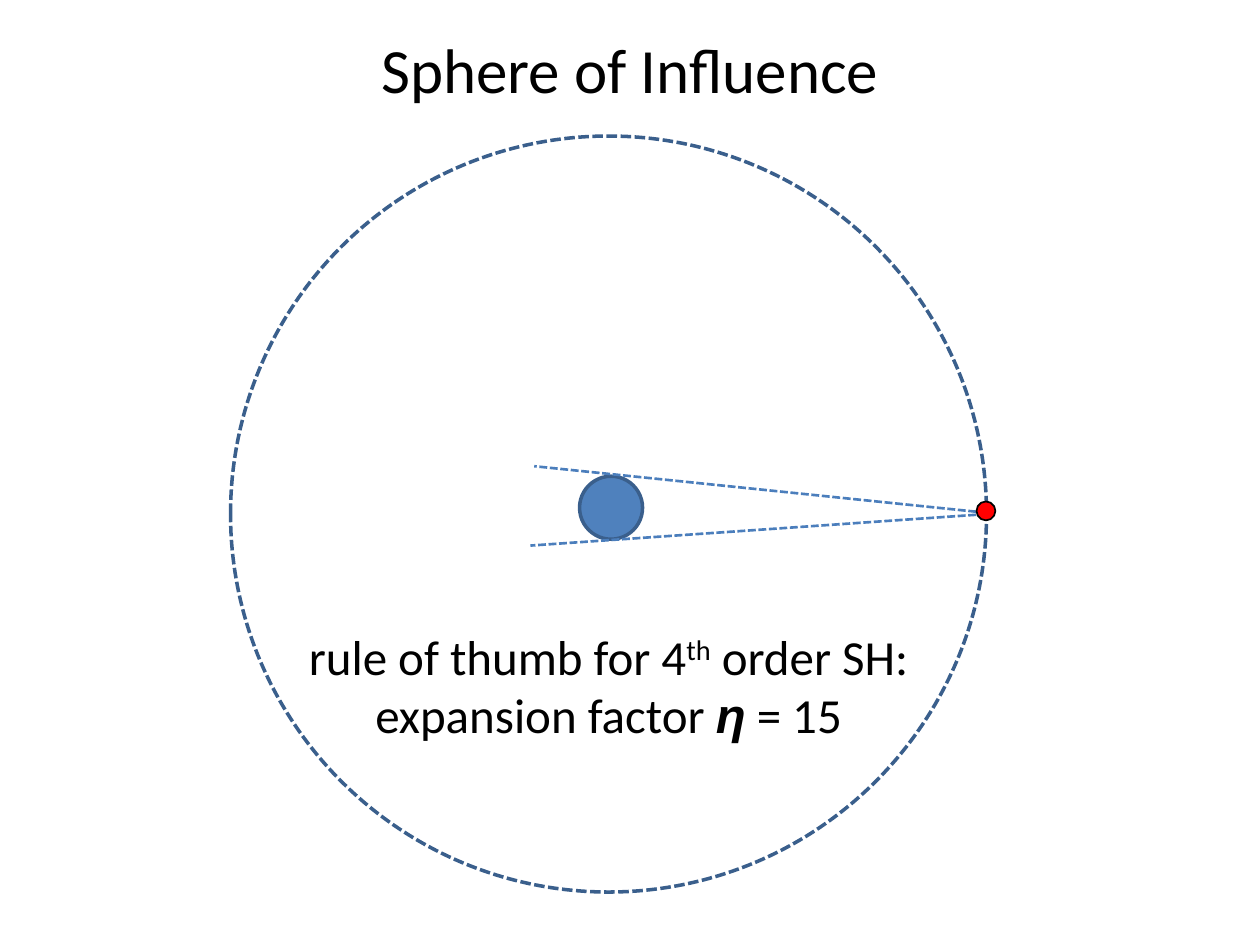
from lxml import etree
from pptx import Presentation
from pptx.dml.color import RGBColor
from pptx.enum.dml import MSO_LINE_DASH_STYLE as Dash
from pptx.enum.shapes import MSO_CONNECTOR, MSO_SHAPE
from pptx.enum.text import MSO_ANCHOR, MSO_AUTO_SIZE, PP_ALIGN
from pptx.oxml.ns import qn
from pptx.util import Inches, Pt

BLACK = RGBColor(0x00, 0x00, 0x00)
RED = RGBColor(0xFF, 0x00, 0x00)
BLUE = RGBColor(0x4F, 0x81, 0xBD)
DARK_BLUE = RGBColor(0x3A, 0x5F, 0x8C)
TANGENT_BLUE = RGBColor(0x4B, 0x7E, 0xBC)


def add_circle(left, top, diameter, fill, line, width):
    circle = slide.shapes.add_shape(
        MSO_SHAPE.OVAL, Inches(left), Inches(top), Inches(diameter), Inches(diameter))
    circle.shadow.inherit = False
    if fill is None:
        circle.fill.background()
    else:
        circle.fill.solid()
        circle.fill.fore_color.rgb = fill
    circle.line.color.rgb = line
    circle.line.width = Pt(width)
    return circle


def format_paragraph(paragraph, size):
    paragraph.alignment = PP_ALIGN.CENTER
    paragraph.font.name = "Calibri"
    paragraph.font.size = Pt(size)
    paragraph.font.color.rgb = BLACK


presentation = Presentation()
presentation.slide_width = Inches(10)
presentation.slide_height = Inches(7.5)
slide = presentation.slides.add_slide(presentation.slide_layouts[5])

title = slide.shapes.title
title.left, title.top = Inches(0.5), Inches(-0.08)
title.width, title.height = Inches(9), Inches(1.25)
title.text_frame.text = "Sphere of Influence"
title.text_frame.vertical_anchor = MSO_ANCHOR.MIDDLE
format_paragraph(title.text_frame.paragraphs[0], 36)

add_circle(4.6, 3.78, 0.5, BLUE, DARK_BLUE, 2)

# Tangents from the point on the sphere past the central body
for start_y, end_x, end_y in [(4.07, 4.24, 3.7), (4.08, 4.21, 4.33)]:
    tangent = slide.shapes.add_connector(
        MSO_CONNECTOR.STRAIGHT, Inches(7.83), Inches(start_y), Inches(end_x), Inches(end_y))
    tangent.line.color.rgb = TANGENT_BLUE
    tangent.line.width = Pt(1.5)
    tangent.line.dash_style = Dash.SQUARE_DOT
    etree.SubElement(tangent._element.spPr, qn("a:effectLst"))

sphere = add_circle(1.83, 1.08, 6, None, DARK_BLUE, 2)
sphere.line.dash_style = Dash.SQUARE_DOT
add_circle(7.75, 3.98, 0.15, RED, BLACK, 1)

rule_box = slide.shapes.add_textbox(Inches(2.33), Inches(4.92), Inches(5), Inches(1.04))
rule_box.text_frame.word_wrap = True
rule_box.text_frame.auto_size = MSO_AUTO_SIZE.SHAPE_TO_FIT_TEXT
paragraph = rule_box.text_frame.paragraphs[0]
format_paragraph(paragraph, 28)
runs = []
for text in ["rule of thumb for 4", "th", " order SH: expansion factor ", "η", " = 15"]:
    run = paragraph.add_run()
    run.text = text
    runs.append(run)
ordinal, eta = runs[1], runs[3]
ordinal.font._element.set("baseline", "30000")
eta.font.name = "Arial"
eta.font.bold = eta.font.italic = True

presentation.save("out.pptx")
